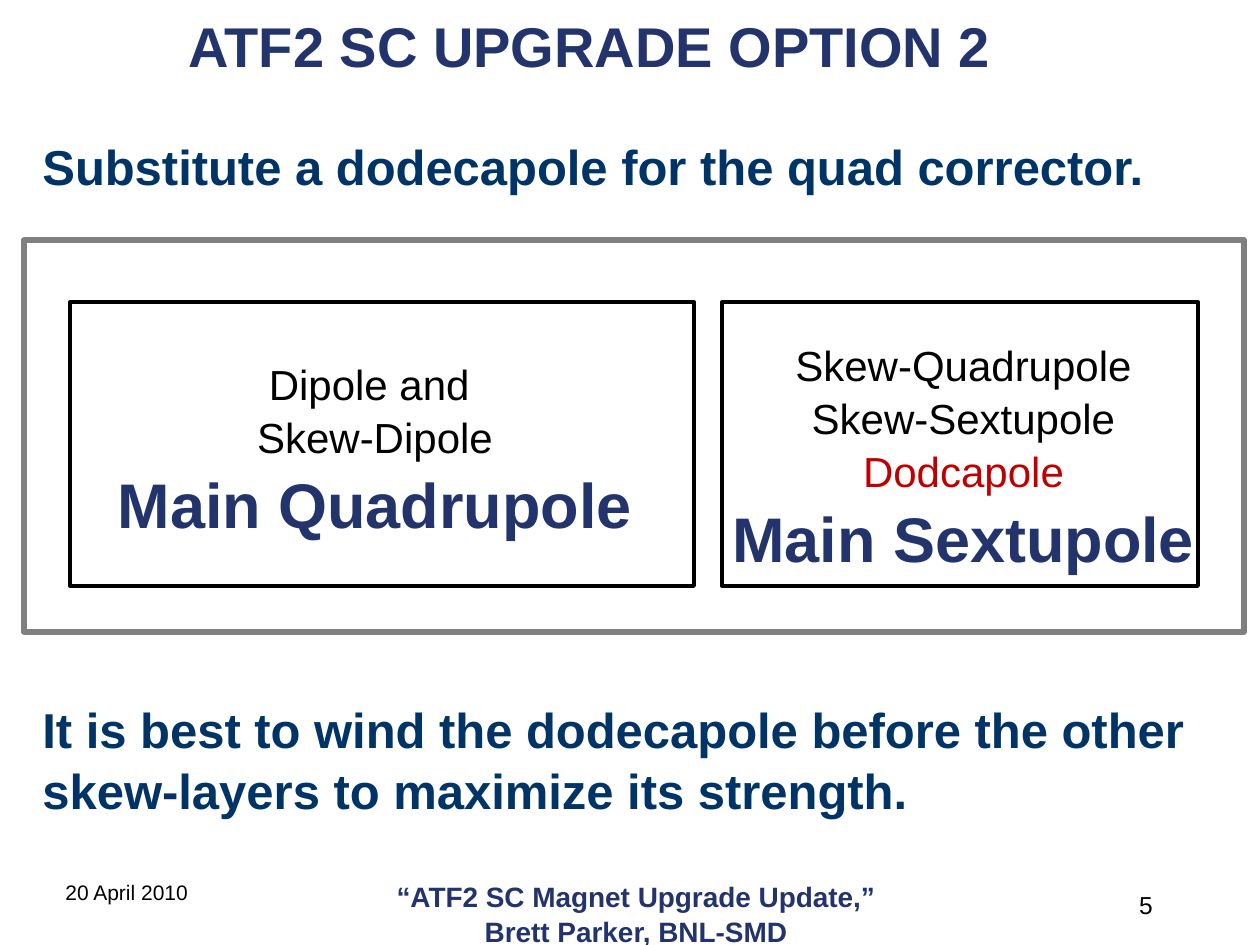
from pptx import Presentation
from pptx.dml.color import RGBColor
from pptx.enum.shapes import MSO_SHAPE as SHAPE
from pptx.enum.text import MSO_ANCHOR as ANCHOR, PP_ALIGN as ALIGN
from pptx.util import Emu, Pt

SCALE = 914400 / 126
NAVY, TEAL, BLACK, GREY, RED = "23346C", "003366", "000000", "808080", "C00000"


def px(n):
    return Emu(round(n * SCALE))


def color(fmt, value):
    fmt.rgb = RGBColor.from_string(value)


def add_text(s, box, lines, align=ALIGN.LEFT, anchor=ANCHOR.TOP, wrap=True):
    tf = s.shapes.add_textbox(*map(px, box)).text_frame
    tf.word_wrap = wrap
    tf.vertical_anchor = anchor
    for i, (text, size, value, bold) in enumerate(lines):
        p = tf.add_paragraph() if i else tf.paragraphs[0]
        p.text = text
        p.alignment = align
        p.line_spacing = 1.05
        p.font.name = "Arial"
        p.font.size = Pt(size)
        p.font.bold = bold
        color(p.font.color, value)


def add_frame(s, box, value, width):
    sp = s.shapes.add_shape(SHAPE.RECTANGLE, *map(px, box))
    sp.shadow.inherit = False
    sp.fill.background()
    sp.line.width = Pt(width)
    color(sp.line.color, value)


def add_title(s, box, text):
    add_text(s, box, [(text, 32, NAVY, True)], anchor=ANCHOR.MIDDLE)


def add_statement(s, box, text):
    add_text(s, box, [(text, 28, TEAL, True)])


def add_magnet(s, box, label_box, layers, main):
    x, y, w, h = box
    dx, dy, lw, lh = label_box
    lines = [(text, 24, value, False) for text, value in layers]
    lines.append((main, 36, NAVY, True))
    add_text(s, (x + dx, y + dy, lw, lh), lines, ALIGN.CENTER, wrap=False)
    add_frame(s, box, BLACK, 2.25)


def add_cryostat(s, box):
    x, y, w, h = box
    add_magnet(s, (x + 46, y + 62, 624, 284), (32, 48, 546, 190),
               [("Dipole and ", BLACK), ("Skew-Dipole", BLACK)],
               "Main Quadrupole")
    add_magnet(s, (x + 698, y + 62, 476, 284), (-4, 29, 491, 242),
               [("Skew-Quadrupole", BLACK), ("Skew-Sextupole", BLACK),
                ("Dodcapole", RED)],
               "Main Sextupole")
    add_frame(s, box, GREY, 3)


def add_footer(s, box, date, credit, number):
    x, y, w, h = box
    add_text(s, (x, y, 284, h), [(date, 12, BLACK, False)])
    add_text(s, (x + 295, y, 576, h), [(credit, 16, NAVY, True)], ALIGN.CENTER)
    add_text(s, (x + w - 231, y + 10, 231, h), [(number, 14, BLACK, False)],
             ALIGN.RIGHT)


def main():
    prs = Presentation()
    prs.slide_width, prs.slide_height = px(1260), px(945)
    s = prs.slides.add_slide(prs.slide_layouts[6])
    add_title(s, (176, 0, 1081, 87), "ATF2 SC UPGRADE OPTION 2")
    add_statement(s, (30, 127, 1201, 72),
                  "Substitute a dodecapole for the quad corrector.")
    add_cryostat(s, (24, 240, 1220, 392))
    add_statement(s, (30, 690, 1201, 131),
                  "It is best to wind the dodecapole before the other "
                  "skew-layers to maximize its strength.")
    add_footer(s, (53, 872, 1112, 63), "20 April 2010",
               "“ATF2 SC Magnet Upgrade Update,” Brett Parker, BNL-SMD", "5")
    prs.save("out.pptx")


if __name__ == "__main__":
    main()
